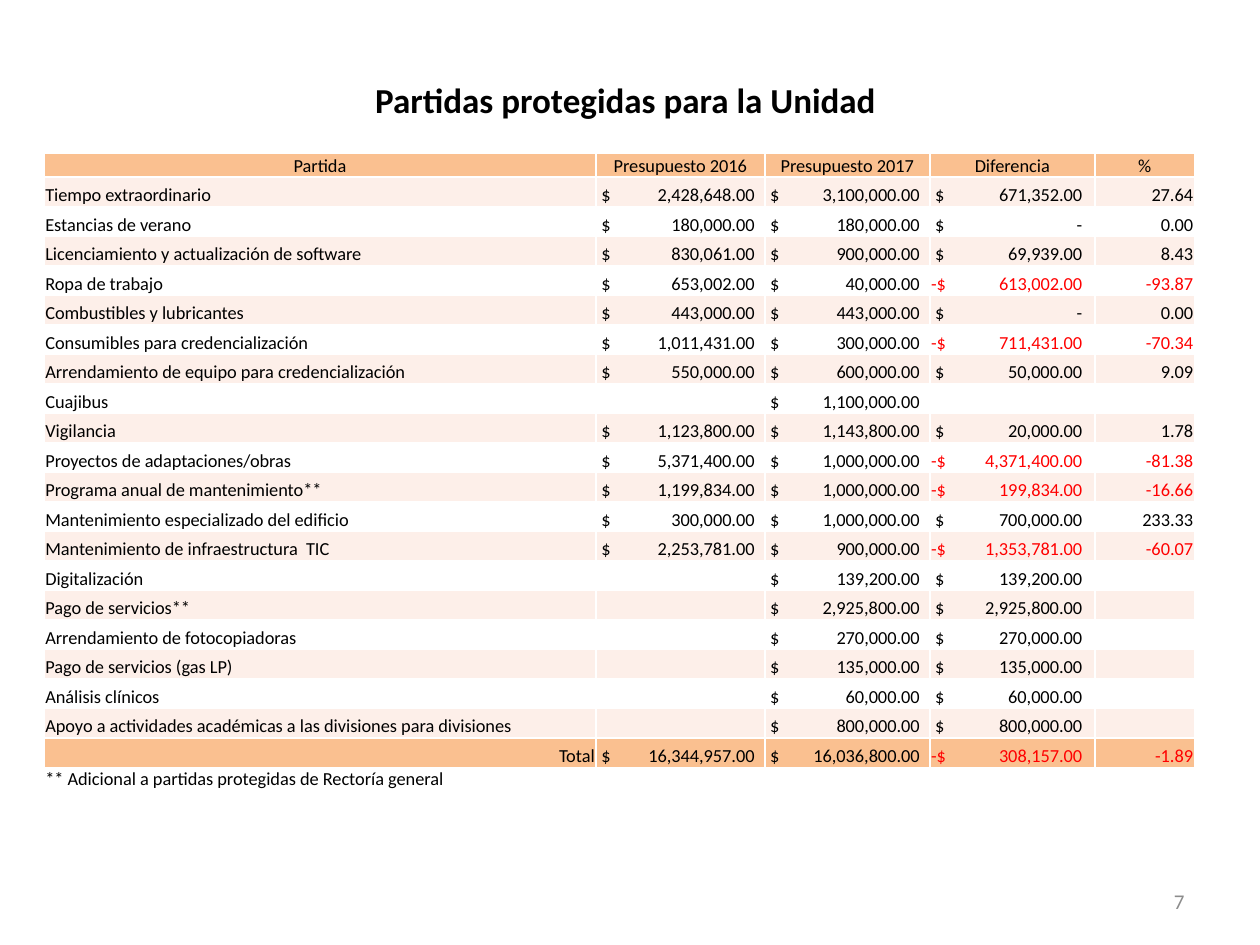
from lxml.etree import SubElement
from pptx import Presentation
from pptx.dml.color import RGBColor
from pptx.enum.text import MSO_ANCHOR, PP_ALIGN
from pptx.oxml.ns import qn
from pptx.util import Inches, Pt

BLACK = RGBColor(0x00, 0x00, 0x00)
WHITE = RGBColor(0xFF, 0xFF, 0xFF)
RED = RGBColor(0xFF, 0x00, 0x00)
GRAY = RGBColor(0x8C, 0x8C, 0x8C)
ORANGE = RGBColor(0xFA, 0xC0, 0x90)
PEACH = RGBColor(0xFD, 0xEF, 0xE9)

FONT_NAME = "Calibri"
TABLE_SIZE = Pt(10.5)
COLUMN_WIDTHS = (4.38, 1.34, 1.31, 1.31, 0.79)
AMOUNT_TABS = {1: 1.25, 2: 1.22, 3: 1.2}
EDGE_ROW_HEIGHT = 0.18

HEADERS = ("Partida", "Presupuesto 2016", "Presupuesto 2017", "Diferencia", "%")
BUDGET_ITEMS = (
    ("Tiempo extraordinario", "2,428,648.00", "3,100,000.00", "671,352.00", "27.64"),
    ("Estancias de verano", "180,000.00", "180,000.00", "-", "0.00"),
    ("Licenciamiento y actualización de software", "830,061.00", "900,000.00", "69,939.00", "8.43"),
    ("Ropa de trabajo", "653,002.00", "40,000.00", "-613,002.00", "-93.87"),
    ("Combustibles y lubricantes", "443,000.00", "443,000.00", "-", "0.00"),
    ("Consumibles para credencialización", "1,011,431.00", "300,000.00", "-711,431.00", "-70.34"),
    ("Arrendamiento de equipo para credencialización", "550,000.00", "600,000.00", "50,000.00", "9.09"),
    ("Cuajibus", "", "1,100,000.00", "", ""),
    ("Vigilancia", "1,123,800.00", "1,143,800.00", "20,000.00", "1.78"),
    ("Proyectos de adaptaciones/obras", "5,371,400.00", "1,000,000.00", "-4,371,400.00", "-81.38"),
    ("Programa anual de mantenimiento**", "1,199,834.00", "1,000,000.00", "-199,834.00", "-16.66"),
    ("Mantenimiento especializado del edificio", "300,000.00", "1,000,000.00", "700,000.00", "233.33"),
    ("Mantenimiento de infraestructura  TIC", "2,253,781.00", "900,000.00", "-1,353,781.00", "-60.07"),
    ("Digitalización", "", "139,200.00", "139,200.00", ""),
    ("Pago de servicios**", "", "2,925,800.00", "2,925,800.00", ""),
    ("Arrendamiento de fotocopiadoras", "", "270,000.00", "270,000.00", ""),
    ("Pago de servicios (gas LP)", "", "135,000.00", "135,000.00", ""),
    ("Análisis clínicos", "", "60,000.00", "60,000.00", ""),
    ("Apoyo a actividades académicas a las divisiones para divisiones", "", "800,000.00", "800,000.00", ""),
)
TOTALS = ("Total", "16,344,957.00", "16,036,800.00", "-308,157.00", "-1.89")
FOOTNOTE = "** Adicional a partidas protegidas de Rectoría general"


def apply_format(target, values):
    """Set each named attribute on the target."""
    for name, value in values.items():
        setattr(target, name, value)


def write_run(paragraph, text, size, color, bold=False):
    """Add a formatted run to the paragraph."""
    run = paragraph.add_run()
    run.text = text
    apply_format(run.font, {"name": FONT_NAME, "size": size, "bold": bold})
    run.font.color.rgb = color


def add_text(slide, box, text, align, size, color, bold=False, top_inset=0.05):
    """Place one line of text in the given box."""
    shape = slide.shapes.add_textbox(*map(Inches, box))
    apply_format(shape.text_frame, {
        "word_wrap": True,
        "vertical_anchor": MSO_ANCHOR.MIDDLE,
        "margin_top": Inches(top_inset),
        "margin_bottom": Inches(0.04),
    })
    paragraph = shape.text_frame.paragraphs[0]
    paragraph.alignment = align
    write_run(paragraph, text, size, color, bold)


def add_borders(cell):
    """Draw thin white lines around the cell."""
    properties = cell._tc.get_or_add_tcPr()
    for side in ("lnL", "lnR", "lnT", "lnB"):
        line = SubElement(properties, qn(f"a:{side}"), w=str(Pt(1)))
        fill = SubElement(line, qn("a:solidFill"))
        SubElement(fill, qn("a:srgbClr"), val=str(WHITE))


def add_right_tab(paragraph, position):
    """Give the paragraph a right-aligned tab stop."""
    tabs = SubElement(paragraph._p.get_or_add_pPr(), qn("a:tabLst"))
    SubElement(tabs, qn("a:tab"), pos=str(Inches(position)), algn="r")


def fill_cell(cell, text, align, background, tab=None):
    """Write and style one table cell, aligning amounts on a tab stop."""
    add_borders(cell)
    cell.fill.solid()
    cell.fill.fore_color.rgb = background
    apply_format(cell, {
        "vertical_anchor": MSO_ANCHOR.BOTTOM,
        "margin_left": Inches(0.01),
        "margin_right": Inches(0.01),
        "margin_top": Inches(0.01),
        "margin_bottom": 0,
    })
    paragraph = cell.text_frame.paragraphs[0]
    paragraph.alignment = align
    if not text:
        paragraph._p.get_or_add_endParaRPr().set("sz", str(int(TABLE_SIZE.pt * 100)))
        return
    negative = text.startswith("-") and text != "-"
    if tab:
        add_right_tab(paragraph, tab)
        text = f"-$\t{text[1:]}" if negative else f" $\t{text}"
    write_run(paragraph, text, TABLE_SIZE, RED if negative else BLACK)


def add_budget_table(slide, box):
    """Build the budget table with header, items, total and footnote."""
    rows = (HEADERS, *BUDGET_ITEMS, TOTALS, (FOOTNOTE, "", "", "", ""))
    last = len(rows) - 1
    total = last - 1
    shape = slide.shapes.add_table(len(rows), len(HEADERS), *map(Inches, box))
    table = shape.table
    apply_format(table, {"first_row": False, "horz_banding": False})
    for column, width in zip(table.columns, COLUMN_WIDTHS):
        column.width = Inches(width)
    item_height = (box[3] - 2 * EDGE_ROW_HEIGHT) / (len(rows) - 2)
    for index, values in enumerate(rows):
        table.rows[index].height = Inches(EDGE_ROW_HEIGHT if index in (0, last) else item_height)
        if index in (0, total):
            background = ORANGE
        else:
            background = PEACH if index % 2 and index < last else WHITE
        for position, text in enumerate(values):
            if index == 0:
                align = PP_ALIGN.CENTER
            elif position == 4 or (index == total and position == 0):
                align = PP_ALIGN.RIGHT
            else:
                align = PP_ALIGN.LEFT
            tab = AMOUNT_TABS.get(position) if index else None
            fill_cell(table.cell(index, position), text, align, background, tab)
    table.cell(last, 0).merge(table.cell(last, len(HEADERS) - 1))


def main():
    """Build and save the presentation."""
    presentation = Presentation()
    apply_format(presentation, {"slide_width": Inches(10), "slide_height": Inches(7.5)})
    slide = presentation.slides.add_slide(presentation.slide_layouts[6])
    add_text(slide, (0.75, 0.45, 8.43, 0.55), "Partidas protegidas para la Unidad",
             PP_ALIGN.CENTER, Pt(20), BLACK, bold=True, top_inset=0.17)
    add_text(slide, (7.17, 6.95, 2.33, 0.4), "7", PP_ALIGN.RIGHT, Pt(12), GRAY)
    add_budget_table(slide, (0.35, 1.22, 9.13, 5.05))
    presentation.save("out.pptx")


if __name__ == "__main__":
    main()
